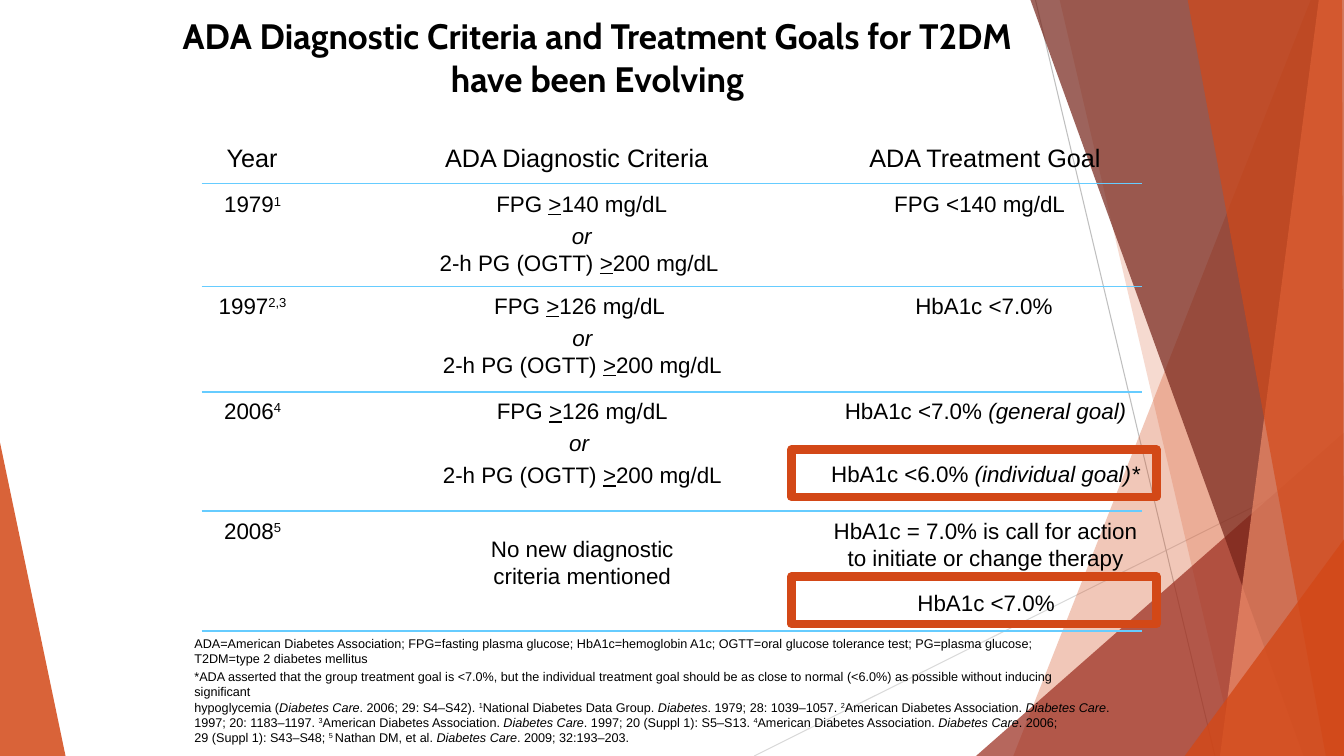
from lxml import etree
from pptx import Presentation
from pptx.dml.color import RGBColor
from pptx.enum.shapes import MSO_CONNECTOR, MSO_SHAPE
from pptx.enum.text import MSO_ANCHOR, MSO_AUTO_SIZE, PP_ALIGN
from pptx.oxml.ns import qn
from pptx.util import Pt

PX = 9144
RUST = RGBColor(0xD3, 0x48, 0x17)
BRICK = RGBColor(0x9B, 0x2D, 0x1F)
WINE = RGBColor(0x74, 0x22, 0x17)
PEACH = RGBColor(0xEF, 0x8C, 0x6A)
SKY = RGBColor(0x66, 0xCC, 0xFF)
SILVER = RGBColor(0xD9, 0xD9, 0xD9)
GRAY = RGBColor(0xBF, 0xBF, 0xBF)
BLACK = RGBColor(0, 0, 0)
CENTER, LEFT = PP_ALIGN.CENTER, PP_ALIGN.LEFT
TOP, MIDDLE, BOTTOM = MSO_ANCHOR.TOP, MSO_ANCHOR.MIDDLE, MSO_ANCHOR.BOTTOM
GROW, FIXED = MSO_AUTO_SIZE.SHAPE_TO_FIT_TEXT, MSO_AUTO_SIZE.NONE
STRAIGHT, RECT = MSO_CONNECTOR.STRAIGHT, MSO_SHAPE.RECTANGLE


class Board:
    font = "Arial"

    def __init__(self, deck):
        self.slide = deck.slides.add_slide(deck.slide_layouts[5])
        self.shapes = self.slide.shapes

    def title(self, box, text, size, font):
        head = self.shapes.title
        head.left, head.top, head.width, head.height = [v * PX for v in box]
        frame = head.text_frame
        frame.text = text
        frame.auto_size = FIXED
        frame.vertical_anchor = MIDDLE
        para = frame.paragraphs[0]
        para.alignment = CENTER
        self.style(para, size, font)
        para.font.bold = True

    def style(self, para, size, font):
        para.font.name = font
        para.font.size = Pt(size)
        para.font.color.rgb = BLACK

    def shard(self, points, color, alpha):
        build = self.shapes.build_freeform(*points[0], scale=PX)
        build.add_line_segments(points[1:], close=True)
        shape = build.convert_to_shape()
        shape.shadow.inherit = False
        shape.fill.solid()
        shape.fill.fore_color.rgb = color
        shape.line.fill.background()
        tint = shape.fill._xPr.find(qn("a:solidFill"))[0]
        etree.SubElement(tint, qn("a:alpha")).set("val", str(alpha * 1000))

    def rule(self, x1, y1, x2, y2, color, width):
        line = self.shapes.add_connector(
            STRAIGHT, x1 * PX, y1 * PX, x2 * PX, y2 * PX)
        line.line.color.rgb = color
        line.line.width = Pt(width)
        etree.SubElement(line._element.spPr, qn("a:effectLst"))

    def frame(self, box):
        shape = self.shapes.add_shape(RECT, *[v * PX for v in box])
        shape.shadow.inherit = False
        shape.fill.background()
        shape.line.color.rgb = RUST
        shape.line.width = Pt(6)

    def text(self, box, paras, size=16, align=CENTER, anchor=TOP,
             wrap=False, fit=GROW, inset=5, gap=3.7):
        frame = self.shapes.add_textbox(*[v * PX for v in box]).text_frame
        frame.word_wrap = wrap
        frame.auto_size = fit
        frame.vertical_anchor = anchor
        frame.margin_left = frame.margin_right = 10 * PX
        frame.margin_top = frame.margin_bottom = inset * PX
        for spot, words in enumerate(paras):
            para = frame.add_paragraph() if spot else frame.paragraphs[0]
            para.alignment = align
            para.space_before = Pt(gap if spot else 0)
            self.style(para, size, self.font)
            self.runs(para, words)

    def runs(self, para, words):
        for piece in words.split("|"):
            mark = piece[0] if piece[0] in "/_^" else ""
            for spot, part in enumerate(piece[len(mark):].split("\n")):
                if spot:
                    para.add_line_break()
                if not part:
                    continue
                run = para.add_run()
                run.text = part
                if mark == "/":
                    run.font.italic = True
                elif mark == "_":
                    run.font.underline = True
                elif mark == "^":
                    run._r.get_or_add_rPr().set("baseline", "30000")


SHARDS_BACK = [([(0, 439), (65, 750), (0, 750)], RUST, 85)]
SHARDS = [
    ([(1300, 0), (1005, 750), (1333, 750), (1333, 0)], RUST, 30),
    ([(1051, 0), (1226, 750), (1333, 750), (1333, 0)], RUST, 20),
    ([(968, 750), (1333, 429), (1333, 750)], BRICK, 72),
    ([(1022, 0), (1293, 750), (1333, 750), (1333, 0)], WINE, 70),
    ([(1308, 0), (1210, 750), (1333, 750), (1333, 0)], PEACH, 70),
    ([(1178, 0), (1315, 750), (1333, 750), (1331, 0)], RUST, 65),
    ([(1175, 750), (1333, 535), (1333, 750)], RUST, 80),
]
HEADS = [("Year", 171, 158), ("ADA Diagnostic Criteria", 392, 360),
         ("ADA Treatment Goal", 820, 314)]
YEARS = [("1979|^1", 184), ("1997|^2,3", 285),
         ("2006|^4", 389), ("2008|^5", 508)]
TESTS = [
    ((424, 183, 306, 96), ["FPG |_>|140 mg/dL",
                           "/or\n|2-h PG (OGTT) |_>|200 mg/dL "]),
    ((427, 284, 301, 96), ["FPG |_>|126 mg/dL ",
                           "/or\n|2-h PG (OGTT) |_>|200 mg/dL"]),
    ((427, 388, 301, 102), ["FPG |_>|126 mg/dL", "/or ",
                            "2-h PG (OGTT) |_>|200 mg/dL"]),
    ((476, 526, 203, 64), ["No new diagnostic\ncriteria mentioned"]),
]
GOALS = [
    ((877, 184, 192, 37), ["FPG <140 mg/dL"], LEFT),
    ((898, 285, 158, 37), ["HbA1c <7.0%"], LEFT),
    ((813, 389, 329, 102), ["HbA1c <7.0% |/(general goal)",
                            "HbA1c <6.0% |/(individual goal)*"], CENTER),
    ((815, 508, 325, 64), ["HbA1c = 7.0% is call for action\n"
                           "to initiate or change therapy"], CENTER),
    ((899, 580, 158, 37), ["HbA1c <7.0%"], CENTER),
]
NOTES = [
    "ADA=American Diabetes Association; FPG=fasting plasma glucose; "
    "HbA1c=hemoglobin A1c; OGTT=oral glucose tolerance test; "
    "PG=plasma glucose;\nT2DM=type 2 diabetes mellitus",
    "*ADA asserted that the group treatment goal is <7.0%, but the "
    "individual treatment goal should be as close to normal (<6.0%) as "
    "possible without inducing significant\nhypoglycemia (|/Diabetes Care|"
    ". 2006; 29: S4–S42). |^1|National Diabetes Data Group. |/Diabetes|"
    ". 1979; 28: 1039–1057. |^2|American Diabetes Association. "
    "|/Diabetes Care|.\n1997; 20: 1183–1197. |^3|American Diabetes "
    "Association. |/Diabetes Care|. 1997; 20 (Suppl 1): S5–S13. |^4|"
    "American Diabetes Association. |/Diabetes Care|. 2006;\n"
    "29 (Suppl 1): S43–S48; |^5 |Nathan DM, et al. |/Diabetes Care|"
    ". 2009; 32:193–203.",
]


def main():
    deck = Presentation()
    deck.slide_width, deck.slide_height = 1333 * PX, 750 * PX
    board = Board(deck)
    for shard in SHARDS_BACK:
        board.shard(*shard)
    board.rule(748, 750, 1333, 458, SILVER, 0.75)
    board.rule(1027, 0, 1205, 750, GRAY, 0.75)
    for shard in SHARDS:
        board.shard(*shard)
    board.title((171, 8, 843, 97), "ADA Diagnostic Criteria and Treatment "
                "Goals for T2DM have been Evolving", 25.2, "Cabin")
    for y in (182, 284, 389, 507, 626):
        board.rule(200, y, 1133, y, SKY, 1)
    for y in (446, 572):
        board.frame((785, y, 362, 47))
    for name, x, width in HEADS:
        board.text((x, 138, width, 43), [name], size=18, anchor=BOTTOM,
                   wrap=True, fit=FIXED, inset=10)
    for year, y in YEARS:
        board.text((205, y, 91, 37), [year])
    for box, lines in TESTS:
        board.text(box, lines, anchor=MIDDLE)
    for box, lines, align in GOALS:
        board.text(box, lines, align=align, gap=25.8)
    board.text((183, 626, 929, 104), NOTES, size=9, align=LEFT,
               wrap=True, gap=2.1)
    deck.save("out.pptx")


if __name__ == "__main__":
    main()
